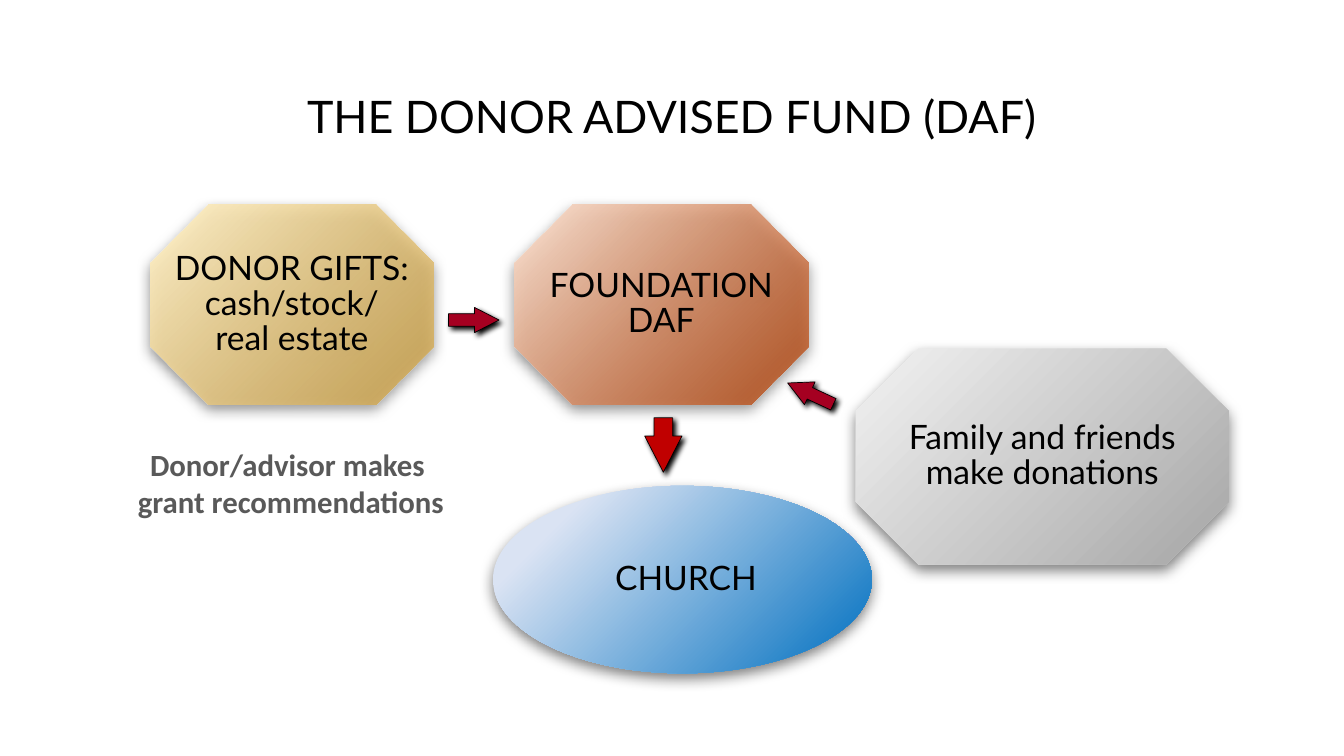
from lxml import etree
from pptx import Presentation, util as u
from pptx.dml.color import RGBColor
from pptx.enum import shapes, text
from pptx.oxml.ns import qn

BLACK = RGBColor(0, 0, 0)
GREY = RGBColor(0x59, 0x59, 0x59)
CRIMSON = RGBColor(0xA5, 0x00, 0x21)
RED = RGBColor(0xC0, 0x00, 0x00)
CREAM, GOLD = RGBColor(0xFF, 0xF2, 0xCC), RGBColor(0xD1, 0xA2, 0x40)
PEACH, RUST = RGBColor(0xFB, 0xE5, 0xD6), RGBColor(0xB6, 0x3D, 0x00)
SILVER, STEEL = RGBColor(0xF2, 0xF2, 0xF2), RGBColor(0xA6, 0xA6, 0xA6)
ICE, BLUE = RGBColor(0xDA, 0xE3, 0xF3), RGBColor(0x00, 0x70, 0xC0)

OCTAGON = shapes.MSO_SHAPE.OCTAGON
OVAL = shapes.MSO_SHAPE.OVAL

# Places are left, top, width, height in percent of the slide.
TITLE = ("THE DONOR ADVISED FUND (DAF)", (12.5, 11.07, 75, 8.53))
NOTE = (["Donor/advisor makes ", "grant recommendations"], (6.23, 58.27, 30.83, 11.2))
# Preset, place, corner cut, gradient stops (position, colour, opacity), left inset, lines
PARTIES = [
    (OCTAGON, (11.18, 27.07, 21.08, 26.4), 0.29, [(0, CREAM, 100), (1, GOLD, 75)], 0,
     ["DONOR GIFTS:", "cash/stock/", "real estate"]),
    (OCTAGON, (38.25, 27.07, 21.9, 26.4), 0.29, [(0, PEACH, 100), (1, RUST, 75)], 0,
     ["FOUNDATION", "DAF"]),
    (OCTAGON, (63.68, 46.13, 27.75, 28.53), 0.29, [(0, SILVER, 100), (1, STEEL, 100)], 0,
     ["Family and friends", "make donations"]),
    (OVAL, (36.68, 64.27, 28.2, 24.8), None, [(0.18, ICE, 100), (0.99, BLUE, 100)], 0.07,
     ["CHURCH"]),
]
# Place, rotation, colour
ARROWS = [
    ((33.38, 40.67, 3.75, 3.33), 0, CRIMSON),
    ((58.43, 50.4, 3.75, 3.33), 205, CRIMSON),
    ((47.33, 56.4, 4.05, 4.93), 90, RED),
]
PARTY_SHADOW = dict(opacity=50, blur=10, distance=4, angle=90)
ARROW_SHADOW = dict(opacity=100, blur=4, distance=3, angle=45)

deck = Presentation()
deck.slide_width, deck.slide_height = u.Inches(13.33), u.Inches(7.5)
page = deck.slides.add_slide(deck.slide_layouts[5])


def spot(place):
    sides = (deck.slide_width, deck.slide_height) * 2
    return [round(side * share / 100) for side, share in zip(sides, place)]


def set_all(target, **values):
    for name, value in values.items():
        setattr(target, name, value)


def set_opacity(color_element, percent):
    etree.SubElement(color_element, qn("a:alpha"), val=str(percent * 1000))


def write(shape, lines, font, size, color, bold=False, spacing=None, **frame_format):
    frame = shape.text_frame
    set_all(frame, **frame_format)
    for index, line in enumerate(lines):
        para = frame.add_paragraph() if index else frame.paragraphs[0]
        set_all(para, alignment=text.PP_ALIGN.CENTER, line_spacing=spacing)
        span = para.add_run()
        span.text = line
        set_all(span.font, name=font, size=u.Pt(size), bold=bold)
        span.font.color.rgb = color


def cast_shadow(shape, opacity, blur, distance, angle):
    shape.shadow.inherit = False
    effects = shape.element.spPr.find(qn("a:effectLst"))
    shadow = etree.SubElement(
        effects, qn("a:outerShdw"), blurRad=str(u.Pt(blur)), dist=str(u.Pt(distance)),
        dir=str(angle * 60000), algn="ctr", rotWithShape="0")
    set_opacity(etree.SubElement(shadow, qn("a:srgbClr"), val=str(BLACK)), opacity)


def fill_gradient(shape, stops):
    shape.fill.gradient()
    shape.fill.gradient_angle = 315
    for stop, (position, color, opacity) in zip(shape.fill.gradient_stops, stops):
        stop.position = position
        stop.color.rgb = color
    stop_list = shape.element.spPr.find(qn("a:gradFill")).find(qn("a:gsLst"))
    for element, (_, _, opacity) in zip(stop_list, stops):
        if opacity < 100:
            set_opacity(element[0], opacity)


heading, place = TITLE
title = page.shapes.title
set_all(title, **dict(zip(("left", "top", "width", "height"), spot(place))))
write(title, [heading], "Lato", 32, BLACK, word_wrap=True,
      auto_size=text.MSO_AUTO_SIZE.NONE, vertical_anchor=text.MSO_ANCHOR.MIDDLE)

lines, place = NOTE
note = page.shapes.add_textbox(*spot(place))
write(note, lines, "Calibri", 22, GREY, bold=True, word_wrap=True)

for preset, place, cut, stops, inset, lines in PARTIES:
    party = page.shapes.add_shape(preset, *spot(place))
    if cut:
        party.adjustments[0] = cut
    fill_gradient(party, stops)
    party.line.fill.background()
    cast_shadow(party, **PARTY_SHADOW)
    write(party, lines, "Lato", 24, BLACK, spacing=u.Pt(25), word_wrap=False,
          vertical_anchor=text.MSO_ANCHOR.MIDDLE, margin_left=u.Inches(inset),
          margin_top=0, margin_right=0, margin_bottom=0)

for place, rotation, color in ARROWS:
    arrow = page.shapes.add_shape(shapes.MSO_SHAPE.RIGHT_ARROW, *spot(place))
    arrow.rotation = rotation
    arrow.adjustments[1] = 0.97
    arrow.fill.solid()
    arrow.fill.fore_color.rgb = color
    arrow.line.color.rgb = BLACK
    arrow.line.width = u.Pt(0.5)
    cast_shadow(arrow, **ARROW_SHADOW)

deck.save("out.pptx")
